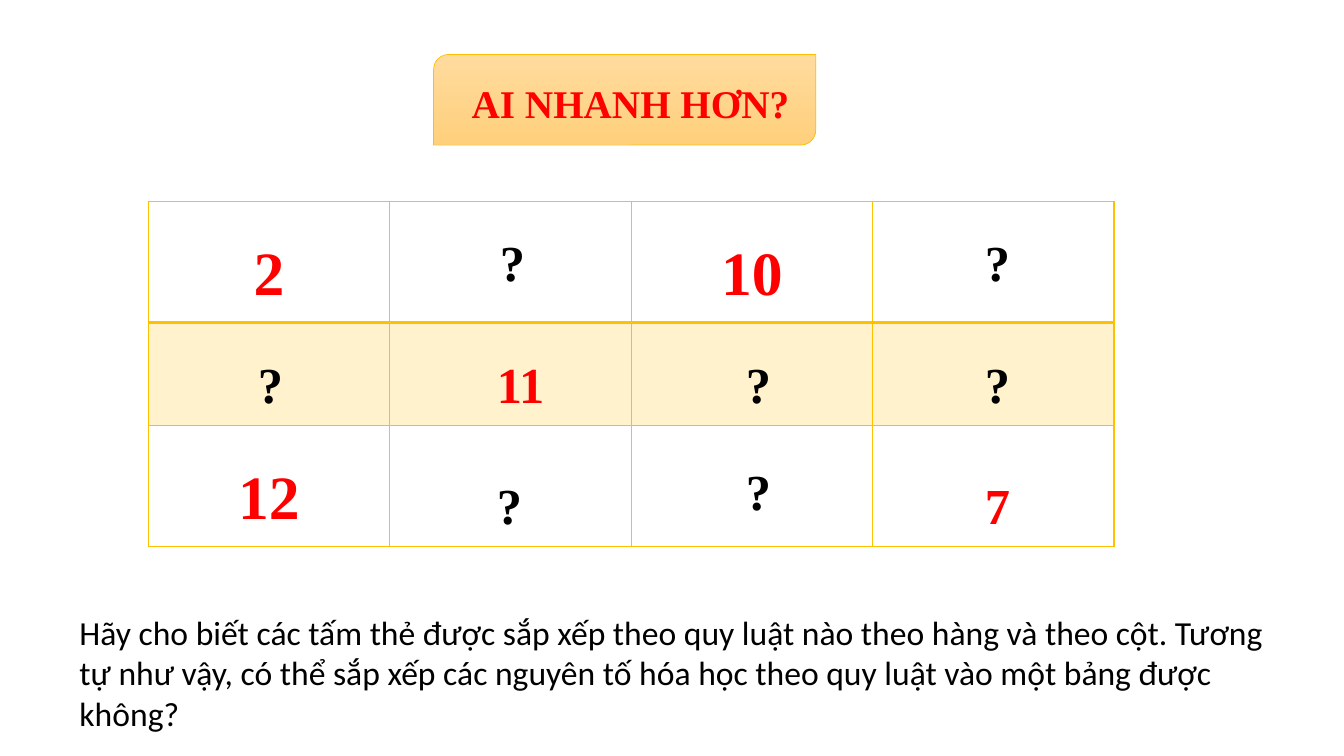
"""Build the quiz slide "AI NHANH HƠN?" with its number grid and question."""
from lxml.etree import SubElement
from pptx import Presentation
from pptx.dml.color import RGBColor
from pptx.enum.shapes import MSO_SHAPE
from pptx.enum.text import MSO_AUTO_SIZE, PP_ALIGN
from pptx.oxml.ns import qn
from pptx.util import Inches, Pt

TITLE = "AI NHANH HƠN?"
QUESTION = (
    "Hãy cho biết các tấm thẻ được sắp xếp theo quy luật nào theo hàng và theo cột. "
    "Tương tự như vậy, có thể sắp xếp các nguyên tố hóa học theo quy luật "
    "vào một bảng được không?"
)
NUMBERS = [
    ["2", "", "10", ""],
    ["", "", "", ""],
    ["12", "", "", ""],
]
CARDS = [
    ("?", 4.86, 2.24), ("?", 9.67, 2.24),
    ("?", 2.46, 3.45), ("11", 4.83, 3.45), ("?", 7.3, 3.45), ("?", 9.67, 3.45),
    ("?", 4.83, 4.65), ("?", 7.3, 4.52), ("7", 9.67, 4.65),
]
GRID_LEFT, GRID_TOP, COLUMN_WIDTH = 1.47, 2, 2.395
ROW_HEIGHTS = [1.2, 1.02, 1.2]
SERIF, SANS = "Times New Roman", "Calibri"

RED = RGBColor(0xFF, 0x00, 0x00)
BLACK = RGBColor(0x00, 0x00, 0x00)
GOLD = RGBColor(0xFF, 0xC0, 0x00)
PALE_GOLD = RGBColor(0xFF, 0xF2, 0xCC)
BANNER_TOP = RGBColor(0xFF, 0xDB, 0x9E)
BANNER_BOTTOM = RGBColor(0xFF, 0xD0, 0x7C)


def style(paragraph, size, color, face=SERIF, bold=True):
    font = paragraph.font if not paragraph.runs else paragraph.runs[0].font
    font.name, font.size, font.bold = face, Pt(size), bold
    font.color.rgb = color


def add_label(shapes, text, box, size, color, face=SERIF, bold=True):
    label = shapes.add_textbox(*map(Inches, box))
    frame = label.text_frame
    frame.word_wrap = True
    frame.auto_size = MSO_AUTO_SIZE.SHAPE_TO_FIT_TEXT
    frame.text = text
    style(frame.paragraphs[0], size, color, face, bold)


def add_borders(cell, bottom_width, top_width):
    properties = cell._tc.get_or_add_tcPr()
    widths = {"a:lnL": 1, "a:lnR": 1, "a:lnT": top_width, "a:lnB": bottom_width}
    for side, width in widths.items():
        border = SubElement(properties, qn(side), w=str(Pt(width)))
        fill = SubElement(border, qn("a:solidFill"))
        SubElement(fill, qn("a:srgbClr"), val=str(GOLD))


def add_banner(slide):
    group = slide.shapes.add_group_shape()
    banner = group.shapes.add_shape(
        MSO_SHAPE.ROUND_2_DIAG_RECTANGLE, *map(Inches, (4.3, 0.54, 3.79, 0.9)))
    banner.shadow.inherit = False
    banner.fill.gradient()
    banner.fill.gradient_angle = 270
    for stop, color in zip(banner.fill.gradient_stops, (BANNER_TOP, BANNER_BOTTOM)):
        stop.color.rgb = color
    banner.line.color.rgb = GOLD
    banner.line.width = Pt(0.5)
    add_label(group.shapes, TITLE, (4.58, 0.74, 3.63, 0.57), 28, RED)


def add_grid(slide):
    column_count = len(NUMBERS[0])
    grid = slide.shapes.add_table(
        len(NUMBERS), column_count, Inches(GRID_LEFT), Inches(GRID_TOP),
        Inches(COLUMN_WIDTH * column_count), Inches(sum(ROW_HEIGHTS))).table
    grid.first_row = grid.horz_banding = False
    for column in grid.columns:
        column.width = Inches(COLUMN_WIDTH)
    for row_index, (numbers, height) in enumerate(zip(NUMBERS, ROW_HEIGHTS)):
        grid.rows[row_index].height = Inches(height)
        for column_index, number in enumerate(numbers):
            cell = grid.cell(row_index, column_index)
            add_borders(cell, 2 if row_index == 0 else 1, 2 if row_index == 1 else 1)
            if row_index == 1:
                cell.fill.solid()
                cell.fill.fore_color.rgb = PALE_GOLD
            else:
                cell.fill.background()
            if number:
                cell.text_frame.text = number
                paragraph = cell.text_frame.paragraphs[0]
                paragraph.alignment = PP_ALIGN.CENTER
                paragraph.line_spacing = 1.5
                style(paragraph, 44, RED)


def main():
    presentation = Presentation()
    presentation.slide_width, presentation.slide_height = Inches(13.33), Inches(7.5)
    slide = presentation.slides.add_slide(presentation.slide_layouts[6])
    add_banner(slide)
    add_grid(slide)
    for card, left, top in CARDS:
        width = 0.55 if len(card) == 1 else 0.77
        add_label(slide.shapes, card, (left, top, width, 0.71), 36,
                  BLACK if card == "?" else RED)
    add_label(slide.shapes, QUESTION, (0.69, 6.02, 12.24, 0.91), 24, BLACK, SANS, False)
    presentation.save("out.pptx")


if __name__ == "__main__":
    main()
